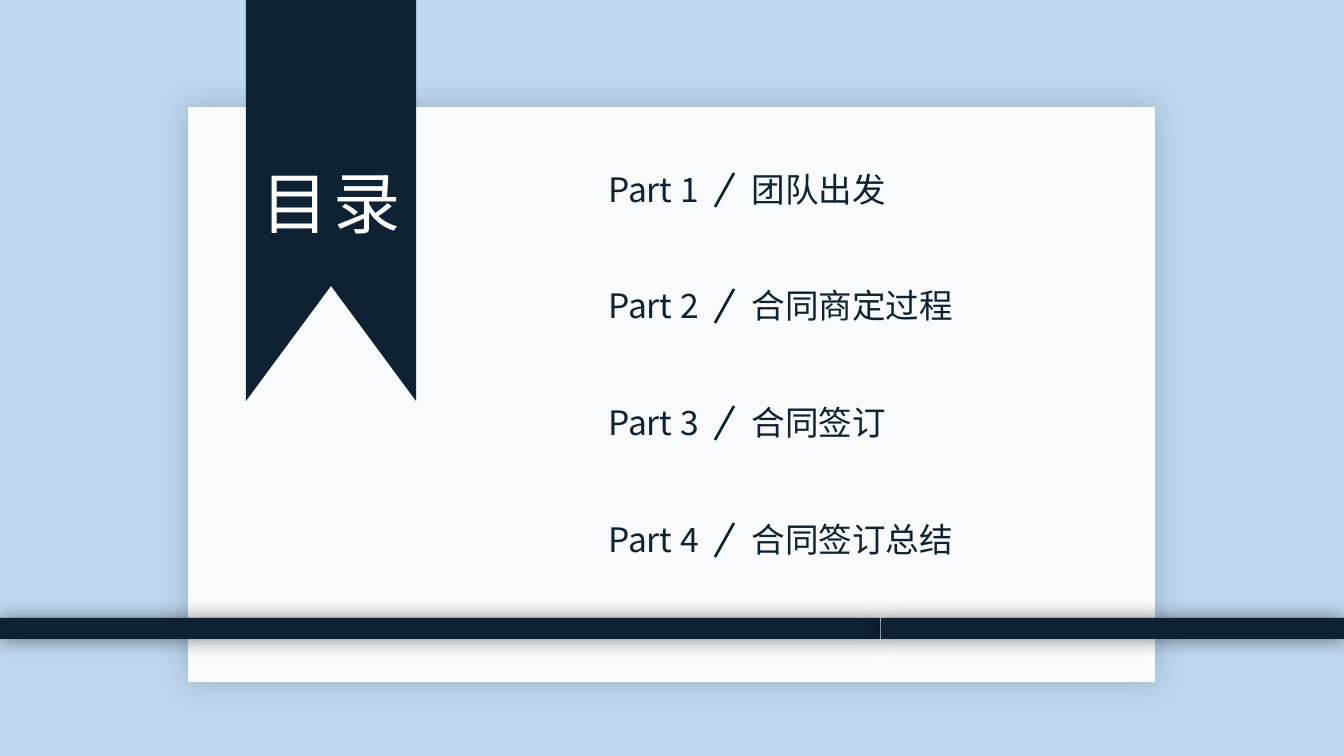
from lxml.etree import SubElement
from pptx import Presentation
from pptx.dml.color import RGBColor
from pptx.enum.shapes import MSO_CONNECTOR, MSO_SHAPE
from pptx.enum.text import MSO_AUTO_SIZE, PP_ALIGN
from pptx.oxml.ns import qn
from pptx.util import Pt

PX = 9565  # EMU per px
W, H = 1344, 756
FONT = "Noto Sans CJK SC"
COLORS = {"sky": "BDD7EE", "navy": "0E2234", "white": "FFFFFF", "black": "000000"}
PARTS = ["团队出发", "合同商定过程", "合同签订", "合同签订总结"]


def add_rect(box, color, opacity=100, shadow=None):
    """Add a borderless rectangle; shadow is (opacity in percent, blur in points)."""
    sp = s.shapes.add_shape(MSO_SHAPE.RECTANGLE, *(v * PX for v in box))
    sp.fill.solid()
    sp.fill.fore_color.rgb = RGBColor.from_string(COLORS[color])
    sp.line.fill.background()
    sp.shadow.inherit = False
    spPr = sp._element.spPr
    if opacity < 100:
        clr = spPr.find(qn("a:solidFill")).find(qn("a:srgbClr"))
        SubElement(clr, qn("a:alpha"), val=str(opacity * 1000))
    if shadow:
        alpha, blur = shadow
        outer = SubElement(spPr.find(qn("a:effectLst")), qn("a:outerShdw"),
                           blurRad=str(Pt(blur)), dist="0", dir="0",
                           algn="ctr", rotWithShape="0")
        clr = SubElement(outer, qn("a:srgbClr"), val=COLORS["black"])
        SubElement(clr, qn("a:alpha"), val=str(alpha * 1000))


def add_text(shapes, box, text, size, color):
    """Add a one-paragraph text box and return its paragraph."""
    tf = shapes.add_textbox(*(v * PX for v in box)).text_frame
    tf.word_wrap = True
    tf.auto_size = MSO_AUTO_SIZE.SHAPE_TO_FIT_TEXT
    p = tf.paragraphs[0]
    r = p.add_run()
    r.text = text
    r.font.name = FONT
    r.font.size = Pt(size)
    r.font.color.rgb = RGBColor.from_string(COLORS[color])
    SubElement(r._r.get_or_add_rPr(), qn("a:ea"), typeface=FONT)
    return p


prs = Presentation()
prs.slide_width, prs.slide_height = W * PX, H * PX
s = prs.slides.add_slide(prs.slide_layouts[6])

# Backdrop and paper card
add_rect((0, 0, W, H), "sky")
add_rect((188, 107, 967, 575), "white", opacity=94, shadow=(18, 22))

# Ribbon with a notched end
fb = s.shapes.build_freeform(246, 0, scale=PX)
fb.add_line_segments([(416, 0), (416, 401), (331, 286), (246, 401)], close=True)
ribbon = fb.convert_to_shape()
ribbon.fill.solid()
ribbon.fill.fore_color.rgb = RGBColor.from_string(COLORS["navy"])
ribbon.line.fill.background()
ribbon.shadow.inherit = False

# Contents list
for i, name in enumerate(PARTS):
    top = 164 + 350 * i // 3
    row = s.shapes.add_group_shape().shapes
    add_text(row, (742, top, 302, 51), name, 25.3, "navy")
    add_text(row, (599, top, 120, 51), f"Part {i + 1}", 25.3, "navy")
    slash = row.add_connector(MSO_CONNECTOR.STRAIGHT, 734 * PX, (top + 9) * PX,
                              715 * PX, (top + 43) * PX)
    slash.line.color.rgb = RGBColor.from_string(COLORS["navy"])
    slash.line.width = Pt(2)
    SubElement(slash._element.spPr, qn("a:effectLst"))

# Title on the ribbon
p = add_text(s.shapes, (245, 157, 172, 91), "目录", 50.6, "white")
p.alignment = PP_ALIGN.CENTER
p.runs[0]._r.get_or_add_rPr().set("spc", "320")

# Band across the bottom
add_rect((0, 618, 880, 21), "navy", shadow=(50, 15))
add_rect((881, 618, W - 881, 21), "navy", shadow=(50, 15))

prs.save("out.pptx")
